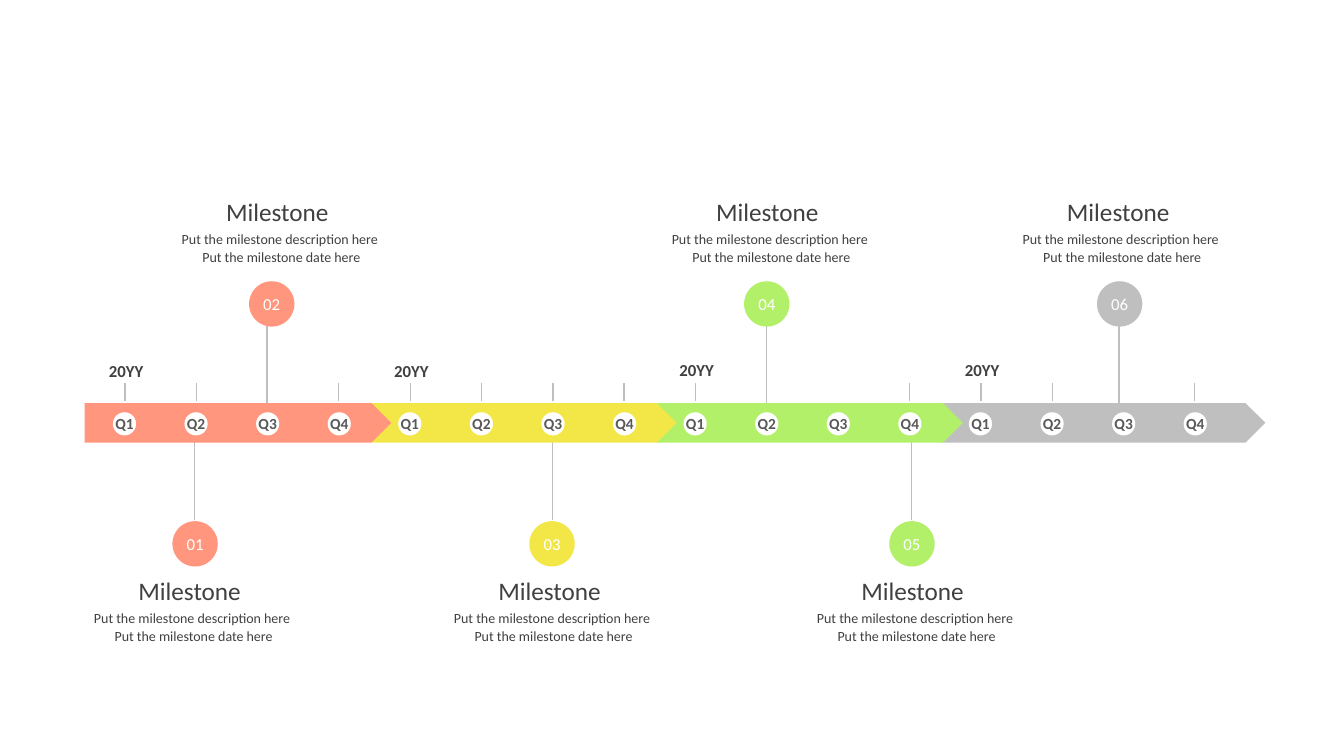
import lxml.etree
import pptx
import pptx.util
import pptx.dml.color
import pptx.enum.shapes
import pptx.enum.text
import pptx.oxml.ns

Inches = pptx.util.Inches
SHAPE = pptx.enum.shapes.MSO_SHAPE
ANCHOR = pptx.enum.text.MSO_ANCHOR
COLORS = {
    "coral": "FF967D", "yellow": "F3E747", "green": "B3F06A", "gray": "BFBFBF",
    "white": "FFFFFF", "ink": "404040", "quarter": "595959",
}


class Timeline:
    font = "Calibri"

    def __init__(self, slide):
        self.slide = slide

    def color(self, name):
        return pptx.dml.color.RGBColor.from_string(COLORS[name])

    def set_text(self, sp, text, size, color, bold=False, anchor=ANCHOR.TOP):
        tf = sp.text_frame
        tf.word_wrap = True
        tf.margin_left = tf.margin_right = tf.margin_top = tf.margin_bottom = 0
        tf.vertical_anchor = anchor
        p = tf.paragraphs[0]
        p.text = text
        p.alignment = pptx.enum.text.PP_ALIGN.CENTER
        p.font.name = self.font
        p.font.size = pptx.util.Pt(size)
        p.font.bold = bold
        p.font.color.rgb = self.color(color)

    def text(self, x, y, w, h, text, size, color="ink", bold=False,
             anchor=ANCHOR.TOP, shapes=None, grow=False):
        shapes = shapes or self.slide.shapes
        sp = shapes.add_textbox(Inches(x), Inches(y), Inches(w), Inches(h))
        self.set_text(sp, text, size, color, bold, anchor)
        if grow:
            sp.text_frame.auto_size = pptx.enum.text.MSO_AUTO_SIZE.SHAPE_TO_FIT_TEXT

    def shape(self, kind, x, y, w, h, fill):
        sp = self.slide.shapes.add_shape(kind, Inches(x), Inches(y), Inches(w), Inches(h))
        sp.shadow.inherit = False
        sp.fill.solid()
        sp.fill.fore_color.rgb = self.color(fill)
        sp.line.fill.background()
        return sp

    def line(self, x, top, bottom):
        sp = self.slide.shapes.add_connector(
            pptx.enum.shapes.MSO_CONNECTOR.STRAIGHT,
            Inches(x), Inches(top), Inches(x), Inches(bottom))
        sp.line.color.rgb = self.color("gray")
        sp.line.width = pptx.util.Pt(1)
        lxml.etree.SubElement(sp.element.spPr, pptx.oxml.ns.qn("a:effectLst"))

    def arrow(self, x, w, fill):
        sp = self.shape(SHAPE.RIGHT_ARROW, x, 4, w, 0.39, fill)
        sp.adjustments[0] = 1
        sp.adjustments[1] = 0.5

    def quarter(self, x, number):
        self.shape(SHAPE.OVAL, x, 4.09, 0.23, 0.23, "white")
        self.text(x - 0.04, 4.12, 0.31, 0.16, f"Q{number}", 11, "quarter", True, ANCHOR.MIDDLE)

    def badge(self, x, y, label, fill):
        sp = self.shape(SHAPE.OVAL, x, y, 0.45, 0.45, fill)
        self.set_text(sp, label, 12, "white", anchor=ANCHOR.MIDDLE)

    def caption(self, center, top):
        shapes = self.slide.shapes.add_group_shape().shapes
        self.text(center - 0.75, top, 1.42, 0.3, "Milestone", 18, shapes=shapes, grow=True)
        self.text(center - 1.11, top + 0.34, 2.22, 0.17,
                  "Put the milestone description here ", 10, shapes=shapes, grow=True)
        self.text(center - 0.8, top + 0.52, 1.6, 0.3,
                  "Put the milestone date here", 10, shapes=shapes)


def main():
    prs = pptx.Presentation()
    prs.slide_width, prs.slide_height = Inches(13.33), Inches(7.5)
    timeline = Timeline(prs.slides.add_slide(prs.slide_layouts[6]))

    year_step, quarter_step, tick_step = 2.83, 0.71, 2.12 / 3
    years = [
        (0.84, 3.04, "coral", (1, 2, 4)),
        (3.69, 3.02, "yellow", (1, 2, 3, 4)),
        (6.51, 3.04, "green", (1, 4)),
        (9.34, 3.21, "gray", (1, 2, 4)),
    ]
    milestones = [
        (1.93, 1.71, 1.92, "coral", False),
        (2.65, 2.47, 2.79, "coral", True),
        (5.48, 5.25, 5.49, "yellow", False),
        (7.6, 7.38, 7.65, "green", True),
        (9.04, 8.82, 9.09, "green", False),
        (11.1, 10.88, 11.13, "gray", True),
    ]

    for i, (x, w, fill, ticks) in enumerate(years):
        timeline.text(0.94 + i * year_step, 3.58 if i < 2 else 3.57, 0.62, 0.26,
                      "20YY", 12, bold=True)
        for q in ticks:
            timeline.line(1.24 + i * year_step + (q - 1) * tick_step, 3.8, 3.98)

    for stem, badge, center, fill, above in milestones:
        timeline.line(stem, *((3.22, 4) if above else (4.38, 5.16)))

    for i, (x, w, fill, ticks) in reversed(list(enumerate(years))):
        timeline.arrow(x, w, fill)
        for q in range(4):
            timeline.quarter(1.12 + i * year_step + q * quarter_step, q + 1)

    for number, (stem, badge, center, fill, above) in enumerate(milestones, 1):
        timeline.badge(badge, 2.79 if above else 5.17, f"{number:02}", fill)
        timeline.caption(center, 1.95 if above else 5.71)

    prs.save("out.pptx")


if __name__ == "__main__":
    main()
